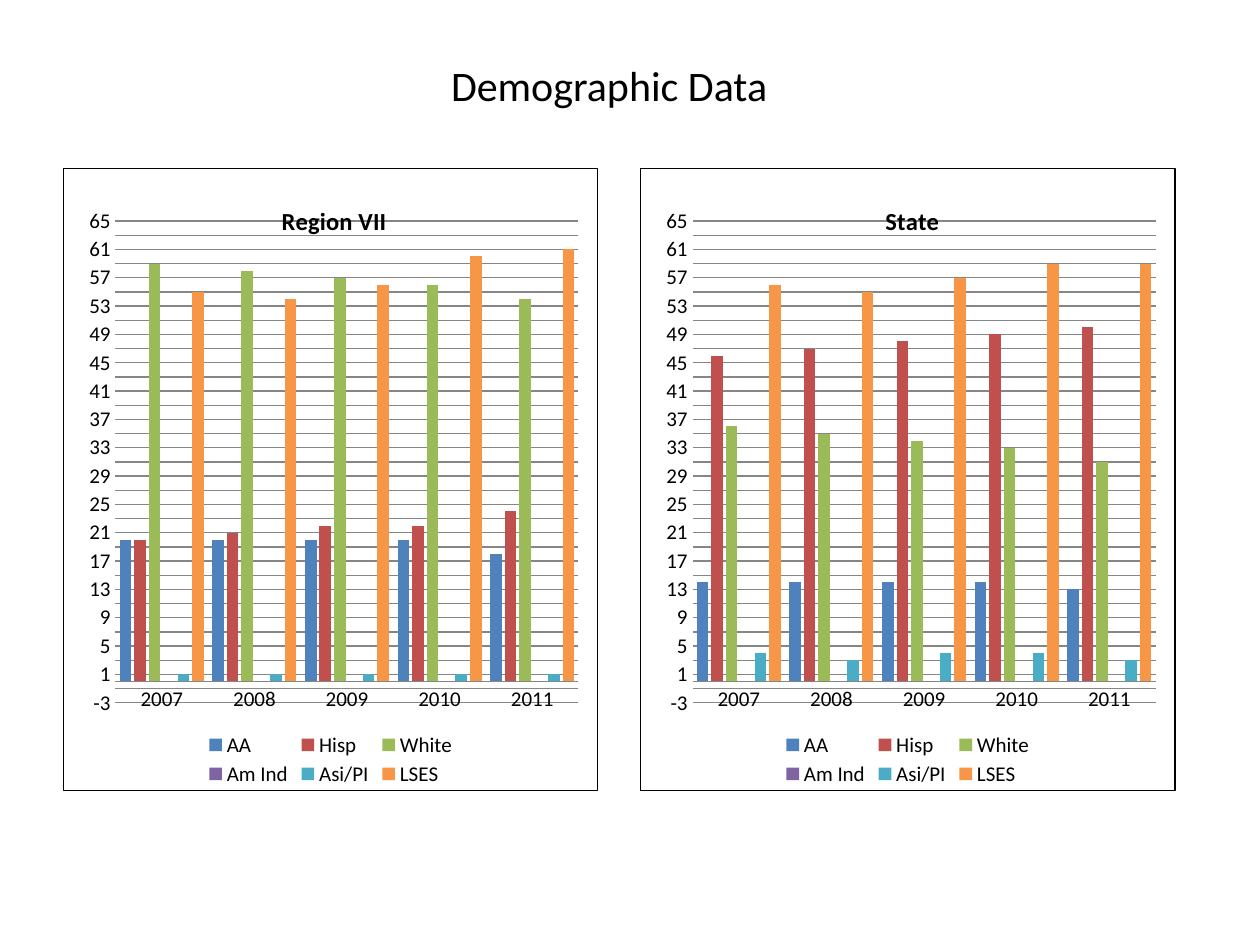
from lxml import etree
from pptx import Presentation
from pptx.chart.data import CategoryChartData as ChartData
from pptx.dml.color import RGBColor
from pptx.enum.chart import XL_CHART_TYPE as Kind, XL_LEGEND_POSITION as Spot
from pptx.enum.chart import XL_TICK_MARK as Tick
from pptx.enum.text import MSO_ANCHOR as Anchor, PP_ALIGN as Align
from pptx.oxml import parse_xml
from pptx.oxml.ns import nsdecls, qn
from pptx.util import Inches, Pt

FONT = "Calibri"
BLACK = RGBColor(0x00, 0x00, 0x00)
GRAY = RGBColor(0x86, 0x86, 0x86)
YEARS = ["2007", "2008", "2009", "2010", "2011"]
GROUPS = {
    "AA": RGBColor(0x4F, 0x81, 0xBD),
    "Hisp": RGBColor(0xC0, 0x50, 0x4D),
    "White": RGBColor(0x9B, 0xBB, 0x59),
    "Am Ind": RGBColor(0x80, 0x64, 0xA2),
    "Asi/PI": RGBColor(0x4B, 0xAC, 0xC6),
    "LSES": RGBColor(0xF7, 0x96, 0x46),
}
REGION = [
    [20, 20, 20, 20, 18],
    [20, 21, 22, 22, 24],
    [59, 58, 57, 56, 54],
    [0, 0, 0, 0, 0],
    [1, 1, 1, 1, 1],
    [55, 54, 56, 60, 61],
]
STATE = [
    [14, 14, 14, 14, 13],
    [46, 47, 48, 49, 50],
    [36, 35, 34, 33, 31],
    [0, 0, 0, 0, 0],
    [4, 3, 4, 4, 3],
    [56, 55, 57, 59, 59],
]


def set_font(font, size, bold=False):
    font.name, font.size, font.bold = FONT, Pt(size), bold
    font.color.rgb = BLACK


def set_layout(part, index, inner=False, **sizes):
    """Place a chart part by fractions (x, y, w, h) of the chart area."""
    for old in part.findall(qn("c:layout")):
        part.remove(old)
    layout = parse_xml(f"<c:layout {nsdecls('c')}><c:manualLayout/></c:layout>")
    items = [("layoutTarget", "inner")] if inner else []
    items += [("xMode", "edge"), ("yMode", "edge"), *sizes.items()]
    for name, value in items:
        etree.SubElement(layout[0], qn(f"c:{name}")).set("val", str(value))
    part.insert(index, layout)


def add_border(space):
    space.find(qn("c:chart")).addnext(parse_xml(
        f"<c:spPr {nsdecls('c', 'a')}><a:noFill/><a:ln w='{Pt(0.75)}'><a:solidFill>"
        f"<a:srgbClr val='{BLACK}'/></a:solidFill></a:ln></c:spPr>"))


def style_axes(chart):
    years, scale = chart.category_axis, chart.value_axis
    for axis in (years, scale):
        axis.major_tick_mark = axis.minor_tick_mark = Tick.NONE
        set_font(axis.tick_labels.font, 12)
    years.format.line.color.rgb = GRAY
    scale.minimum_scale, scale.maximum_scale = -3, 65
    scale.major_unit = 2
    scale.format.line.fill.background()
    scale.has_major_gridlines = True
    scale.major_gridlines.format.line.color.rgb = GRAY


def add_bars(slide, left, title, rows, title_x):
    data = ChartData(number_format="0")
    data.categories = YEARS
    for name, row in zip(GROUPS, rows):
        data.add_series(name, row)
    chart = slide.shapes.add_chart(
        Kind.COLUMN_CLUSTERED, Inches(left), Inches(1.33),
        Inches(4.25), Inches(4.95), data).chart
    set_font(chart.font, 18)
    style_axes(chart)

    plot = chart.plots[0]
    plot.gap_width, plot.overlap = 75, -25
    plot.vary_by_categories = False
    for series, color in zip(plot.series, GROUPS.values()):
        series.format.fill.solid()
        series.format.fill.fore_color.rgb = color

    chart.has_title = True
    head = chart.chart_title
    head.text_frame.text = title
    set_font(head.text_frame.paragraphs[0].font, 14, True)
    chart.has_legend = True
    legend = chart.legend
    legend.position = Spot.BOTTOM
    legend.include_in_layout = False
    set_font(legend.font, 12)

    space = chart._chartSpace
    add_border(space)
    set_layout(space.find(".//" + qn("c:title")), 1, x=title_x, y=0.05)
    set_layout(space.find(".//" + qn("c:plotArea")), 0, inner=True,
               x=0.097, y=0.085, w=0.867, h=0.774)
    set_layout(space.find(".//" + qn("c:legend")), 1,
               x=0.26, y=0.9, w=0.48, h=0.1)


def set_title(slide, text):
    title = slide.shapes.title
    title.left, title.top = Inches(2.17), Inches(0.42)
    title.width, title.height = Inches(5.33), Inches(0.5)
    frame = title.text_frame
    frame.text = text
    frame.vertical_anchor = Anchor.TOP
    line = frame.paragraphs[0]
    line.alignment = Align.CENTER
    set_font(line.font, 24)


def main():
    deck = Presentation()
    deck.slide_width, deck.slide_height = Inches(10), Inches(7.5)
    slide = deck.slides.add_slide(deck.slide_layouts[5])
    add_bars(slide, 0.5, "Region VII", REGION, 0.4)
    add_bars(slide, 5.08, "State", STATE, 0.45)
    set_title(slide, "Demographic Data")
    deck.save("out.pptx")


if __name__ == "__main__":
    main()
